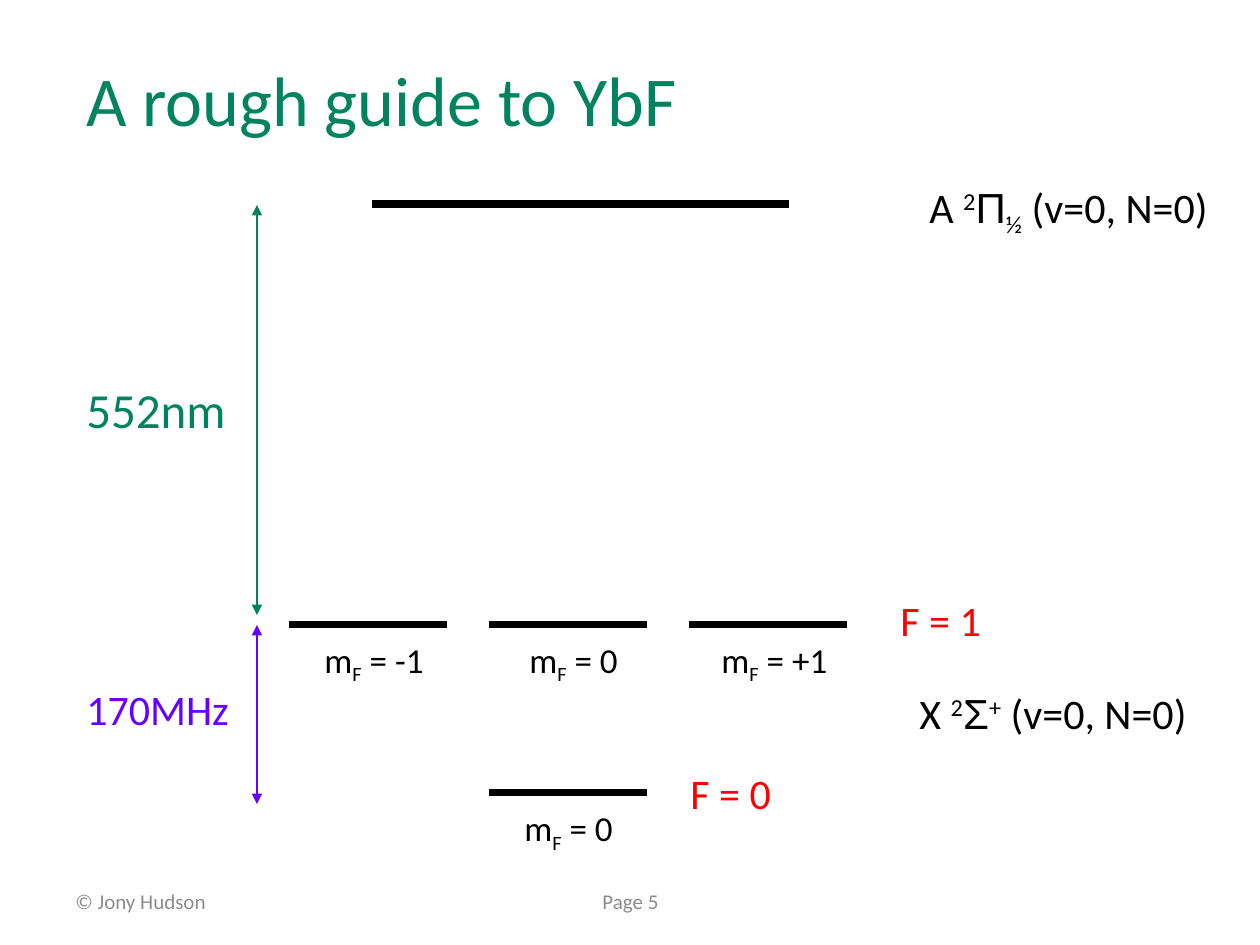
from dataclasses import dataclass

from lxml.etree import SubElement
from pptx import Presentation
from pptx.dml.color import RGBColor
from pptx.enum.shapes import MSO_CONNECTOR
from pptx.enum.text import MSO_ANCHOR as Anchor, MSO_AUTO_SIZE as AutoSize, PP_ALIGN as Align
from pptx.oxml.ns import qn
from pptx.util import Emu, Pt

PX = 914400 / 126


@dataclass(frozen=True)
class Theme:
    font: str = "Calibri"
    greek_font: str = "Arial"
    black: str = "000000"
    green: str = "01835F"
    violet: str = "6600FF"
    red: str = "FF0000"
    grey: str = "8C8C8C"
    title: int = 40
    optical: int = 28
    body: int = 24
    sublevel: int = 20
    footer: int = 12


THEME = Theme()
SUPER, SUB = 30, -25
GREEK = "ΠΣ"

# Framed text: content, (left, top, width, height), size, colour, alignment
FRAMED = [
    ("© Jony Hudson", (63, 876, 294, 50), THEME.footer, THEME.grey, Align.LEFT),
    ("Page 5", (431, 876, 399, 50), THEME.footer, THEME.grey, Align.CENTER),
    ("A rough guide to YbF", (74, 45, 1071, 107), THEME.title, THEME.green, Align.LEFT),
]

# Labels: runs as (content, baseline shift), box, size, colour
LABELS = [
    ([("F = 1", 0)], (888, 588, 107, 63), THEME.body, THEME.red),
    ([("F = 0", 0)], (678, 761, 107, 63), THEME.body, THEME.red),
    ([("552nm", 0)], (74, 373, 166, 72), THEME.optical, THEME.green),
    ([("170MHz", 0)], (74, 677, 169, 63), THEME.body, THEME.violet),
    ([("A ", 0), ("2", SUPER), ("Π", 0), ("½", SUB), (" (v=0, N=0)", 0)],
     (917, 175, 312, 63), THEME.body, THEME.black),
    ([("X ", 0), ("2", SUPER), ("Σ", 0), ("+", SUPER), (" (v=0, N=0)", 0)],
     (907, 681, 297, 63), THEME.body, THEME.black),
]

# Sublevels: m_F value, column, level height, label left, label width
F1_Y, F0_Y, EXCITED_Y = 625, 793, 204
SUBLEVELS = [
    ("-1", -1, F1_Y, 312, 127),
    ("0", 0, F1_Y, 517, 116),
    ("+1", 1, F1_Y, 709, 134),
    ("0", 0, F0_Y, 512, 116),
]
CENTRE_X, COLUMN_STEP, HALF_LEVEL = 568, 200, 79
LABEL_DROP, LABEL_HEIGHT = 7, 55
EXCITED_SPAN = (372, 789)

# Transitions: top, bottom, colour
ARROW_X = 257
TRANSITIONS = [(F1_Y, 804, THEME.violet), (205, 615, THEME.green)]


def px(value):
    return Emu(round(value * PX))


def add_text(slide, runs, box, size, colour, align=Align.LEFT, framed=False):
    """Framed text wraps and sits mid-height; other text fits its words."""
    frame = slide.shapes.add_textbox(*map(px, box)).text_frame
    frame.word_wrap = framed
    frame.auto_size = AutoSize.NONE if framed else AutoSize.SHAPE_TO_FIT_TEXT
    frame.vertical_anchor = Anchor.MIDDLE if framed else Anchor.TOP
    paragraph = frame.paragraphs[0]
    paragraph.alignment = align
    for content, shift in runs:
        run = paragraph.add_run()
        run.text = content
        run.font.name = THEME.greek_font if content in GREEK else THEME.font
        run.font.size = Pt(size)
        run.font.color.rgb = RGBColor.from_string(colour)
        if shift:
            run.font._element.set("baseline", str(shift * 1000))


def add_line(slide, start, end, colour, width, arrows=False):
    connector = slide.shapes.add_connector(
        MSO_CONNECTOR.STRAIGHT, *map(px, start + end))
    connector.line.color.rgb = RGBColor.from_string(colour)
    connector.line.width = Pt(width)
    if arrows:
        line = connector.line._get_or_add_ln()
        for tag in ("a:headEnd", "a:tailEnd"):
            SubElement(line, qn(tag), type="triangle")
    SubElement(connector._element.spPr, qn("a:effectLst"))


def add_sublevel(slide, value, column, y, label_left, label_width):
    centre = CENTRE_X + column * COLUMN_STEP
    add_line(slide, (centre - HALF_LEVEL, y), (centre + HALF_LEVEL, y), THEME.black, 4)
    add_text(slide, [("m", 0), ("F", SUB), (f" = {value}", 0)],
             (label_left, y + LABEL_DROP, label_width, LABEL_HEIGHT),
             THEME.sublevel, THEME.black)


def main():
    presentation = Presentation()
    presentation.slide_width, presentation.slide_height = px(1260), px(945)
    slide = presentation.slides.add_slide(presentation.slide_layouts[6])

    for content, box, size, colour, align in FRAMED:
        add_text(slide, [(content, 0)], box, size, colour, align, framed=True)
    for sublevel in SUBLEVELS:
        add_sublevel(slide, *sublevel)
    left, right = EXCITED_SPAN
    add_line(slide, (left, EXCITED_Y), (right, EXCITED_Y), THEME.black, 5)
    for top, bottom, colour in TRANSITIONS:
        add_line(slide, (ARROW_X, top), (ARROW_X, bottom), colour, 0.75, arrows=True)
    for label in LABELS:
        add_text(slide, *label)

    presentation.save("out.pptx")


if __name__ == "__main__":
    main()
